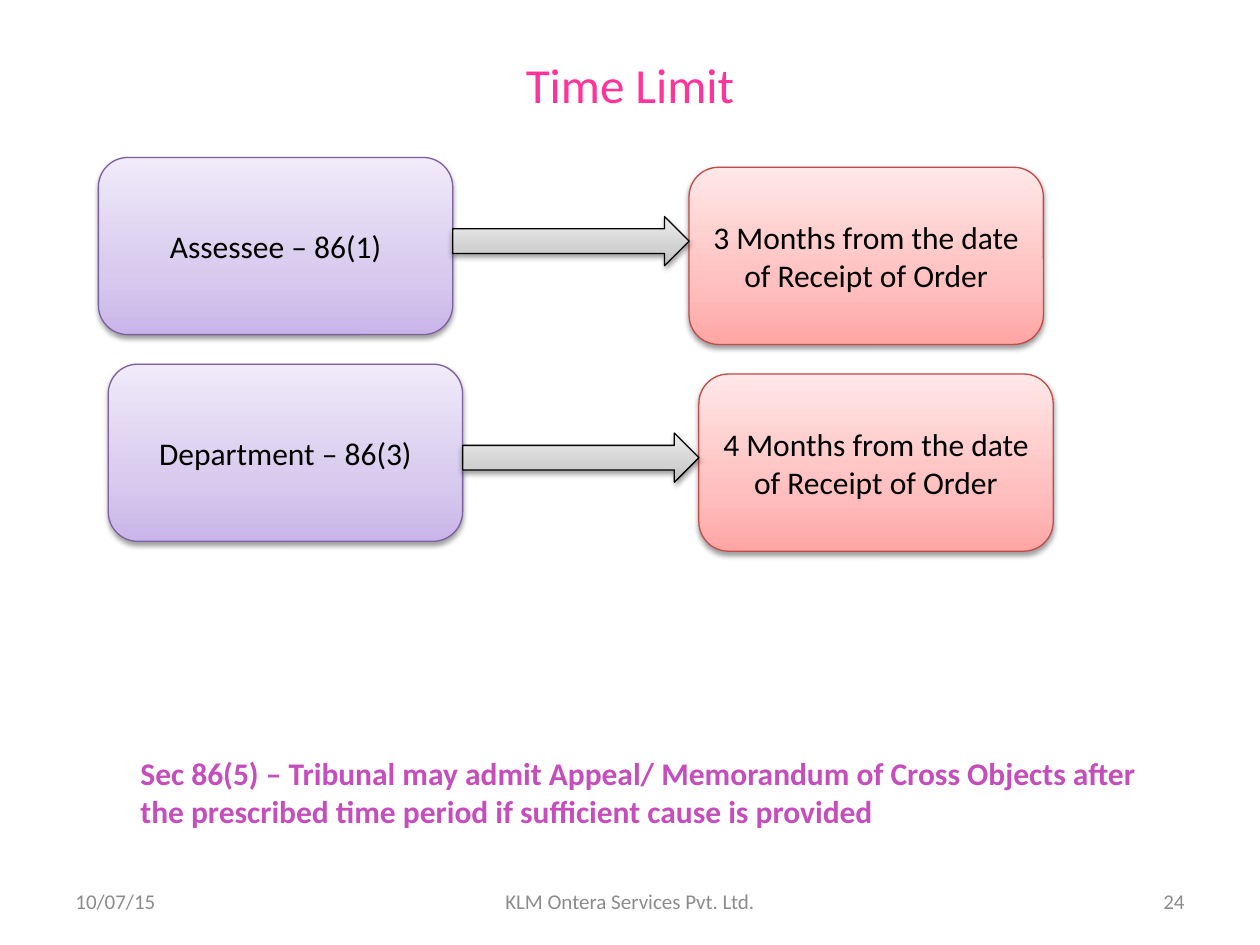
from typing import NamedTuple

from lxml import etree
from pptx import Presentation
from pptx import util as u
from pptx.dml.color import RGBColor
from pptx.enum import shapes, text
from pptx.oxml import parse_xml
from pptx.oxml.ns import nsdecls, qn

COLUMNS, ROWS = 128, 96
CELL = u.Inches(10) / COLUMNS  # square grid cells
BLOCK_WIDTH, BLOCK_HEIGHT = 36, 18
ARROW_WIDTH, ARROW_HEIGHT = 24, 5
LEFT, CENTER, RIGHT = text.PP_ALIGN.LEFT, text.PP_ALIGN.CENTER, text.PP_ALIGN.RIGHT
MIDDLE, TOP = text.MSO_ANCHOR.MIDDLE, text.MSO_ANCHOR.TOP


class Area(NamedTuple):
    column: float
    row: float
    width: float
    height: float


class Style(NamedTuple):
    stops: tuple  # bottom, 35 %, top
    line: str


class Limit(NamedTuple):
    column: int
    row: int
    arrow_row: int
    party: str
    period: str


class Label(NamedTuple):
    area: Area
    words: str
    size: int
    color: str
    align: int
    anchor: int = MIDDLE
    bold: bool = False


PARTY = Style(("C9B5E8", "D8CBEE", "F0EAF9"), "7D60A0")
PERIOD = Style(("FFA6A5", "FFC0BF", "FFE7E7"), "BF4C48")
ARROW = Style(("BDBDBD", "D1D1D1", "EEEEEE"), "000000")

LIMITS = [
    Limit(10, 16, 22, "Assessee – 86(1)", "3 Months from the date of Receipt of Order"),
    Limit(11, 37, 44, "Department – 86(3)", "4 Months from the date of Receipt of Order"),
]
LABELS = [
    Label(Area(6.4, 4.27, 115.2, 8.53), "Time Limit", 28, "FF3399", CENTER),
    Label(Area(6.4, 89, 29.87, 5.1), "10/07/15", 12, "8C8C8C", LEFT),
    Label(Area(43.73, 89, 40.53, 5.1), "KLM Ontera Services Pvt. Ltd.", 12, "8C8C8C", CENTER),
    Label(Area(91.73, 89, 29.87, 5.1), "24", 12, "8C8C8C", RIGHT),
    Label(Area(13, 76, 108, 9),
          "Sec 86(5) – Tribunal may admit Appeal/ Memorandum of Cross Objects after "
          "the prescribed time period if sufficient cause is provided",
          18, "C54DBC", LEFT, TOP, True),
]


def color(value: str) -> RGBColor:
    return RGBColor.from_string(value)


def place(area: Area) -> list:
    return [u.Emu(round(cells * CELL)) for cells in area]


def write(box, words: str, size: int, ink: str, align: int,
          anchor: int = MIDDLE, bold: bool = False) -> None:
    frame = box.text_frame
    frame.word_wrap = True
    frame.vertical_anchor = anchor
    para = frame.paragraphs[0]
    para.alignment = align
    span = para.add_run()
    span.text = words
    for name, value in {"name": "Calibri", "size": u.Pt(size), "bold": bold}.items():
        setattr(span.font, name, value)
    span.font.color.rgb = color(ink)


def shade(shape, style: Style) -> None:
    """Apply an upward gradient, a thin outline and a soft shadow."""
    shape.fill.gradient()
    shape.fill.gradient_angle = 90
    stops = shape.fill._fill._gradFill.find(qn("a:gsLst"))
    for stop in list(stops):
        stops.remove(stop)
    for share, value in zip((0, 35, 100), style.stops):
        stop = etree.SubElement(stops, qn("a:gs"), pos=str(share * 1000))
        etree.SubElement(stop, qn("a:srgbClr"), val=value)
    shape.line.color.rgb = color(style.line)
    shape.line.width = u.Pt(0.75)
    shape.shadow.inherit = False
    shape._element.spPr.find(qn("a:effectLst")).append(parse_xml(
        f'<a:outerShdw {nsdecls("a")} blurRad="40000" dist="20000" dir="5400000" '
        'rotWithShape="0"><a:srgbClr val="000000"><a:alpha val="38000"/></a:srgbClr>'
        '</a:outerShdw>'))


def draw_shape(page, kind: int, area: Area, style: Style, words: str = "") -> None:
    shape = page.shapes.add_shape(kind, *place(area))
    shade(shape, style)
    if words:
        write(shape, words, 18, "000000", CENTER)


def draw_limit(page, limit: Limit) -> None:
    block = shapes.MSO_SHAPE.ROUNDED_RECTANGLE
    arrow_column = limit.column + BLOCK_WIDTH
    period_column = arrow_column + ARROW_WIDTH
    draw_shape(page, block, Area(limit.column, limit.row, BLOCK_WIDTH, BLOCK_HEIGHT),
               PARTY, limit.party)
    draw_shape(page, block, Area(period_column, limit.row + 1, BLOCK_WIDTH, BLOCK_HEIGHT),
               PERIOD, limit.period)
    draw_shape(page, shapes.MSO_SHAPE.RIGHT_ARROW,
               Area(arrow_column, limit.arrow_row, ARROW_WIDTH, ARROW_HEIGHT), ARROW)


def draw_label(page, label: Label) -> None:
    box = page.shapes.add_textbox(*place(label.area))
    write(box, *label[1:])


def main() -> None:
    deck = Presentation()
    deck.slide_width = u.Emu(round(COLUMNS * CELL))
    deck.slide_height = u.Emu(round(ROWS * CELL))
    page = deck.slides.add_slide(deck.slide_layouts[6])
    # Each party, its arrow and its time limit
    for limit in LIMITS:
        draw_limit(page, limit)
    # Title, footer and note
    for label in LABELS:
        draw_label(page, label)
    deck.save("out.pptx")


if __name__ == "__main__":
    main()
